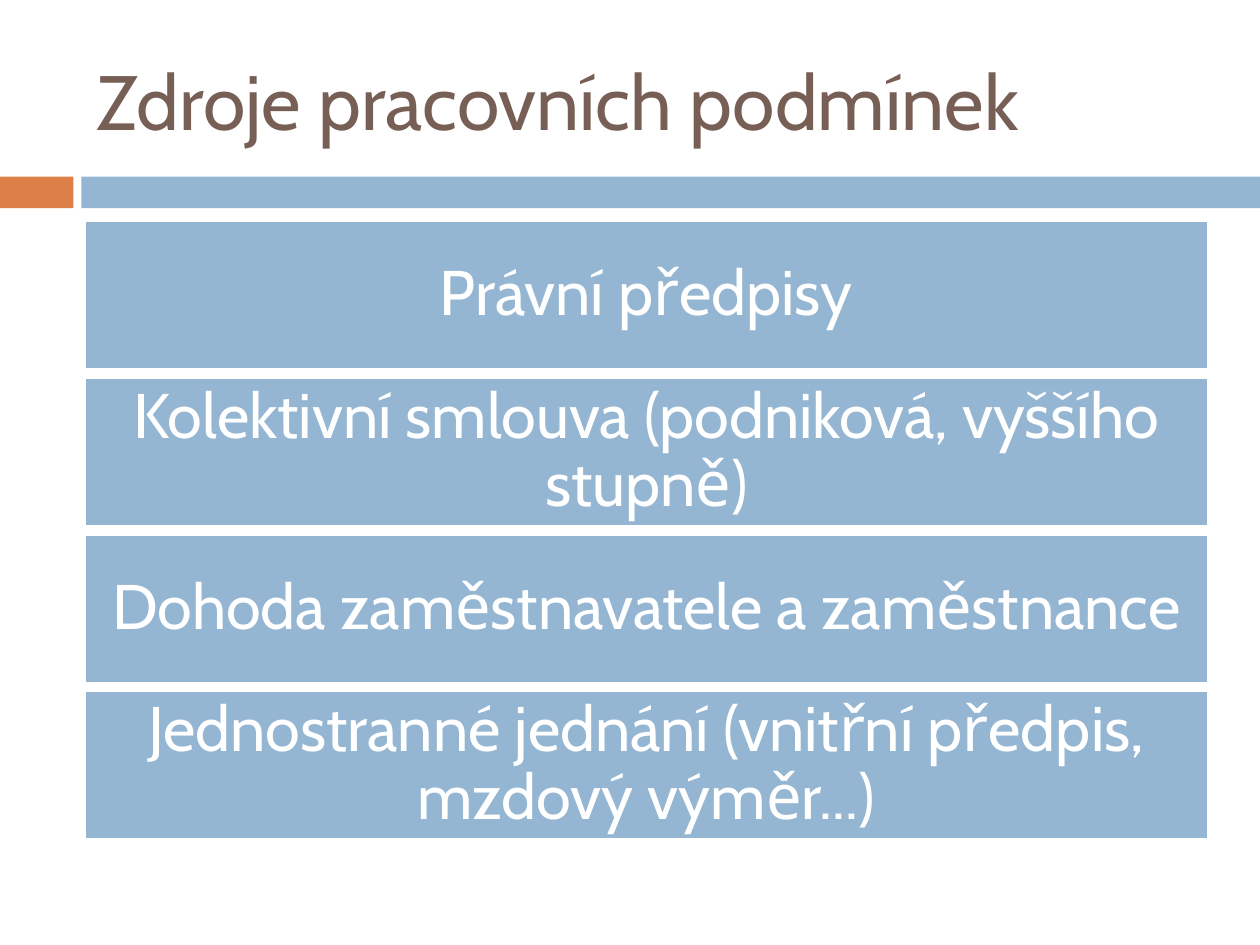
from dataclasses import dataclass

from pptx import Presentation
from pptx.dml.color import RGBColor
from pptx.enum.shapes import MSO_SHAPE
from pptx.enum.text import MSO_ANCHOR, PP_ALIGN
from pptx.shapes.autoshape import Shape
from pptx.slide import Slide
from pptx.text.text import TextFrame
from pptx.util import Cm, Pt

RECTANGLE = MSO_SHAPE.RECTANGLE
MIDDLE = MSO_ANCHOR.MIDDLE
LEFT, CENTER = PP_ALIGN.LEFT, PP_ALIGN.CENTER

WHITE = RGBColor(0xFF, 0xFF, 0xFF)
BLUE = RGBColor(0x94, 0xB6, 0xD2)
ORANGE = RGBColor(0xDD, 0x80, 0x47)
BROWN = RGBColor(0x77, 0x5F, 0x55)
FONT = "Cabin"

CONTENT_LEFT = 1.7
CONTENT_WIDTH = 22.66
SOURCES_TOP = 4.45
SOURCE_HEIGHT = 3.0
SOURCE_GAP = 0.16
SOURCES = [
    "Právní předpisy",
    "Kolektivní smlouva (podniková, vyššího stupně)",
    "Dohoda zaměstnavatele a zaměstnance",
    "Jednostranné jednání (vnitřní předpis, mzdový výměr...)",
]


@dataclass
class Box:
    left: float
    top: float
    width: float
    height: float

    def lengths(self) -> tuple[Cm, Cm, Cm, Cm]:
        return Cm(self.left), Cm(self.top), Cm(self.width), Cm(self.height)


def add_rectangle(slide: Slide, box: Box, color: RGBColor) -> Shape:
    shape = slide.shapes.add_shape(RECTANGLE, *box.lengths())
    shape.shadow.inherit = False
    shape.fill.solid()
    shape.fill.fore_color.rgb = color
    shape.line.fill.background()
    return shape


def write_text(frame: TextFrame, text: str, size: int, color: RGBColor,
               alignment: PP_ALIGN, line_spacing: float) -> None:
    frame.word_wrap = True
    frame.vertical_anchor = MIDDLE
    paragraph = frame.paragraphs[0]
    paragraph.alignment = alignment
    paragraph.line_spacing = line_spacing
    run = paragraph.add_run()
    run.text = text
    run.font.name = FONT
    run.font.size = Pt(size)
    run.font.color.rgb = color


def add_title(slide: Slide, text: str) -> None:
    box = Box(CONTENT_LEFT, 0.64, CONTENT_WIDTH, 2.74)
    title = slide.shapes.add_textbox(*box.lengths())
    write_text(title.text_frame, text, 44, BROWN, LEFT, 1.0)


def add_source(slide: Slide, box: Box, text: str) -> None:
    shape = add_rectangle(slide, box, BLUE)
    shape.line.color.rgb = WHITE
    shape.line.width = Pt(1.5)
    frame = shape.text_frame
    frame.margin_left = frame.margin_right = Cm(0.25)
    frame.margin_top = frame.margin_bottom = Cm(0.25)
    write_text(frame, text, 36, WHITE, CENTER, 0.9)


def main() -> None:
    presentation = Presentation()
    presentation.slide_width = Cm(25.4)
    presentation.slide_height = Cm(19.05)
    slide = presentation.slides.add_slide(presentation.slide_layouts[6])

    add_rectangle(slide, Box(0, 3.56, 1.48, 0.64), ORANGE)
    add_rectangle(slide, Box(1.64, 3.56, 23.76, 0.64), BLUE)
    add_title(slide, "Zdroje pracovních podmínek")
    for index, text in enumerate(SOURCES):
        top = SOURCES_TOP + index * (SOURCE_HEIGHT + SOURCE_GAP)
        add_source(slide, Box(CONTENT_LEFT, top, CONTENT_WIDTH, SOURCE_HEIGHT), text)

    presentation.save("out.pptx")


if __name__ == "__main__":
    main()
